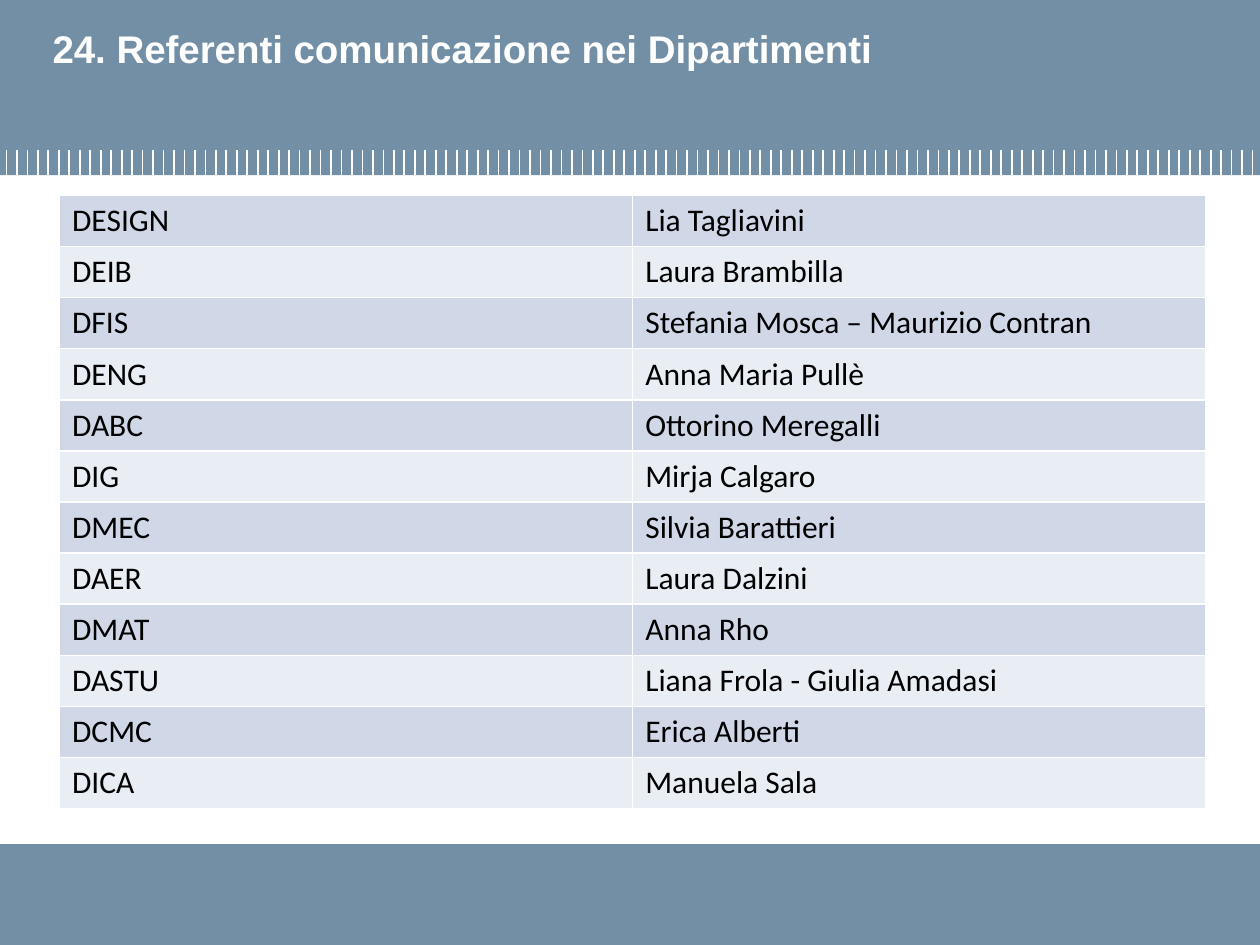
from lxml import etree
from pptx import Presentation
from pptx.dml.color import RGBColor
from pptx.enum.shapes import MSO_CONNECTOR, MSO_SHAPE
from pptx.enum.text import MSO_ANCHOR
from pptx.oxml.ns import qn
from pptx.util import Cm, Pt

RECTANGLE = MSO_SHAPE.RECTANGLE
STRAIGHT = MSO_CONNECTOR.STRAIGHT
TOP = MSO_ANCHOR.TOP

SLATE, WHITE, BLACK = "728FA5", "FFFFFF", "000000"
ROW_FILLS = ("D0D8E8", "E9EDF4")

PAGE_WIDTH, PAGE_HEIGHT = 25.4, 19.05
TICK_COUNT = 120
TITLE = "24. Referenti comunicazione nei Dipartimenti"
CONTACTS = [
    ("DESIGN", "Lia Tagliavini"),
    ("DEIB", "Laura Brambilla"),
    ("DFIS", "Stefania Mosca – Maurizio Contran"),
    ("DENG", "Anna Maria Pullè"),
    ("DABC", "Ottorino Meregalli"),
    ("DIG", "Mirja Calgaro"),
    ("DMEC", "Silvia Barattieri"),
    ("DAER", "Laura Dalzini"),
    ("DMAT", "Anna Rho"),
    ("DASTU", "Liana Frola - Giulia Amadasi"),
    ("DCMC", "Erica Alberti"),
    ("DICA", "Manuela Sala"),
]


def color(value):
    return RGBColor.from_string(value)


def write(frame, text, font_name, size, text_color, bold=False):
    para = frame.paragraphs[0]
    para.text = text
    para.font.name = font_name
    para.font.size = Pt(size)
    para.font.bold = bold
    para.font.color.rgb = color(text_color)


def add_band(page, left, top, width, height):
    band = page.shapes.add_shape(
        RECTANGLE, Cm(left), Cm(top), Cm(width), Cm(height))
    band.shadow.inherit = False
    band.fill.solid()
    band.fill.fore_color.rgb = color(SLATE)
    band.line.fill.background()


def add_ticks(page, left, top, width, height):
    """Evenly spaced vertical lines, the first and last on the box edges."""
    ticks = page.shapes.add_group_shape().shapes
    step = width / (TICK_COUNT - 1)
    for index in range(TICK_COUNT):
        x = Cm(left + index * step)
        tick = ticks.add_connector(STRAIGHT, x, Cm(top), x, Cm(top + height))
        tick.line.color.rgb = color(WHITE)
        tick.line.width = Pt(1)
        etree.SubElement(tick._element.spPr, qn("a:effectLst"))


def add_header(page, left, top, width, height):
    add_band(page, left, top, width, height)
    add_ticks(page, left + 0.13, top + height - 0.51, width - 0.28, 0.51)

    # Title
    box = page.shapes.add_textbox(
        Cm(left + 0.81), Cm(top + 0.38), Cm(width - 1.57), Cm(2.34))
    box.text_frame.word_wrap = True
    box.text_frame.vertical_anchor = TOP
    write(box.text_frame, TITLE, "Arial", 22, WHITE, bold=True)


def add_borders(cell):
    properties = cell._tc.get_or_add_tcPr()
    for side in ("a:lnL", "a:lnR", "a:lnT", "a:lnB"):
        line = etree.SubElement(properties, qn(side), w=str(Pt(1)))
        fill = etree.SubElement(line, qn("a:solidFill"))
        etree.SubElement(fill, qn("a:srgbClr"), val=WHITE)


def add_contacts(page, left, top, width, height):
    table = page.shapes.add_table(
        len(CONTACTS), 2, Cm(left), Cm(top), Cm(width), Cm(height)).table
    table.first_row = False
    table.horz_banding = False
    for row_index, contact in enumerate(CONTACTS):
        for column_index, text in enumerate(contact):
            cell = table.cell(row_index, column_index)
            add_borders(cell)
            cell.fill.solid()
            cell.fill.fore_color.rgb = color(ROW_FILLS[row_index % 2])
            write(cell.text_frame, text, "Calibri", 18, BLACK)


def main():
    deck = Presentation()
    deck.slide_width, deck.slide_height = Cm(PAGE_WIDTH), Cm(PAGE_HEIGHT)
    page = deck.slides.add_slide(deck.slide_layouts[6])

    # Footer band, header with title, table of contacts
    add_band(page, 0, PAGE_HEIGHT - 2.03, PAGE_WIDTH, 2.03)
    add_header(page, 0, 0, PAGE_WIDTH, 3.53)
    add_contacts(page, 1.2, 3.94, 23.11, 12.37)

    deck.save("out.pptx")


if __name__ == "__main__":
    main()
